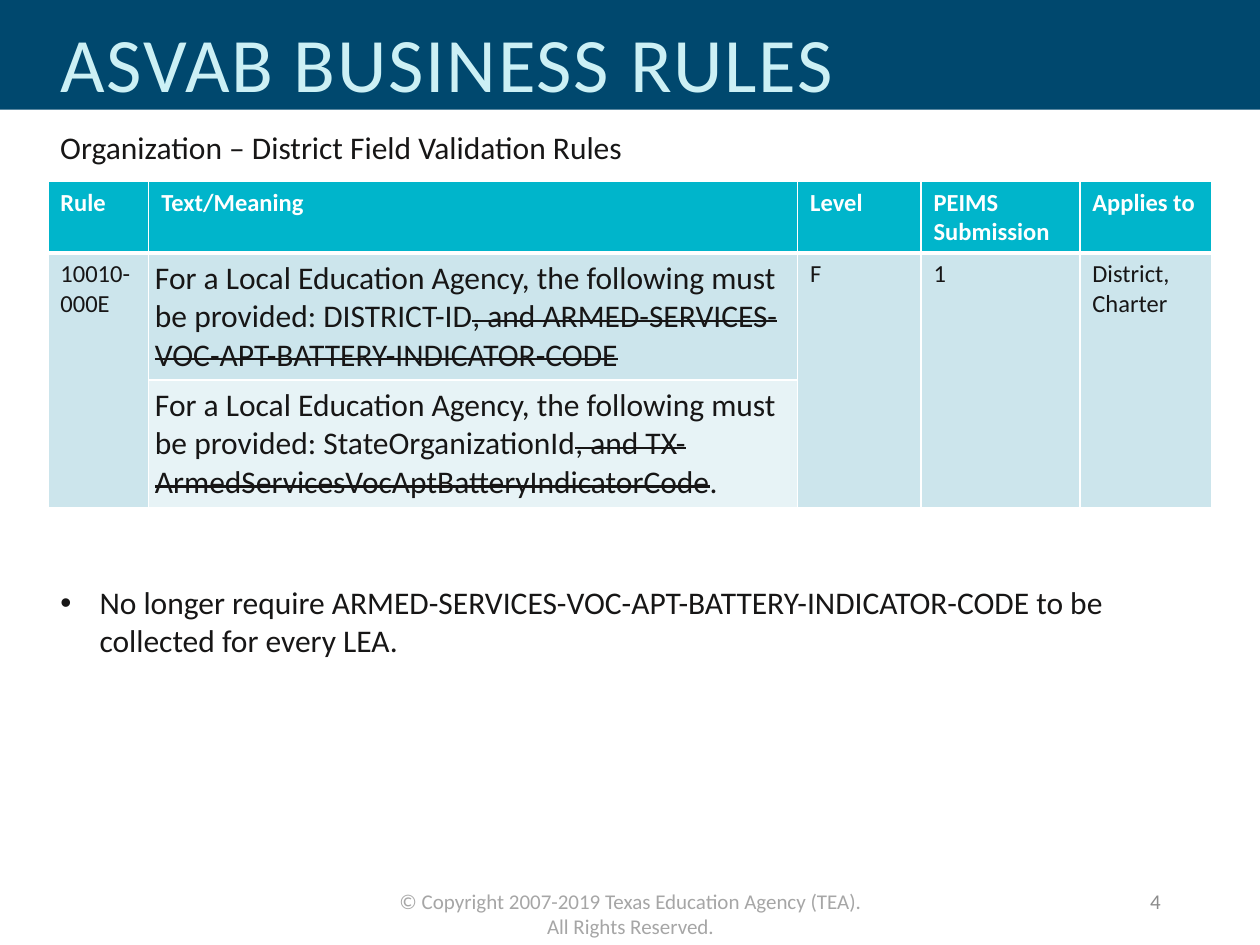
from lxml.etree import SubElement
from pptx import Presentation
from pptx.dml.color import RGBColor
from pptx.enum.shapes import MSO_SHAPE
from pptx.enum.text import MSO_ANCHOR, MSO_AUTO_SIZE, PP_ALIGN
from pptx.oxml.ns import qn
from pptx.util import Inches, Pt

FONT = "Calibri"
COLORS = {
    "band": "00486E", "title": "CCF0F5", "head": "00B5CB", "dark": "CCE5EC",
    "light": "E7F3F6", "text": "171616", "white": "FFFFFF",
    "foot": "A6A6A6", "page": "8C8C8C",
}
LEFT, WIDTH = 0.38, 9.23
LEAD = "For a Local Education Agency, the following must be provided: "


def color(name):
    return RGBColor.from_string(COLORS[name])


def style(run, size, tint, bold=False):
    font = run.font
    font.name, font.size, font.bold = FONT, Pt(size), bold
    font.color.rgb = color(tint)


def place(shape, box):
    shape.left, shape.top, shape.width, shape.height = map(Inches, box)


def add_text(slide, box, text, size, tint, align=PP_ALIGN.LEFT,
             anchor=MSO_ANCHOR.TOP):
    frame = slide.shapes.add_textbox(*map(Inches, box)).text_frame
    frame.word_wrap = True
    frame.vertical_anchor = anchor
    frame.text = text
    para = frame.paragraphs[0]
    para.alignment = align
    style(para.runs[0], size, tint)


def add_title(slide, box):
    """Draw the band across the top and set the title on it."""
    band = slide.shapes.add_shape(
        MSO_SHAPE.RECTANGLE, 0, 0, Inches(10), Inches(0.87))
    band.shadow.inherit = False
    band.fill.solid()
    band.fill.fore_color.rgb = color("band")
    band.line.fill.background()
    title = slide.shapes.title
    # The band goes behind the placeholders.
    title._element.addprevious(band._element)
    place(title, box)
    frame = title.text_frame
    frame.text = "ASVAB BUSINESS RULES"
    frame.auto_size = MSO_AUTO_SIZE.NONE
    frame.vertical_anchor = MSO_ANCHOR.MIDDLE
    para = frame.paragraphs[0]
    para.alignment = PP_ALIGN.LEFT
    para.line_spacing = 0.9
    style(para.runs[0], 44, "title")
    para.runs[0]._r.get_or_add_rPr().set("spc", "100")


def paint(cell, fill, top, base):
    """Give a cell white borders and a fill; top and base are in points."""
    props = cell._tc.get_or_add_tcPr()
    for side, width in (("L", 1), ("R", 1), ("T", top), ("B", base)):
        line = SubElement(props, qn(f"a:ln{side}"), w=str(Pt(width)))
        solid = SubElement(line, qn("a:solidFill"))
        SubElement(solid, qn("a:srgbClr"), val=COLORS["white"])
    cell.fill.solid()
    cell.fill.fore_color.rgb = color(fill)


def write(cell, text, tint, bold=False):
    cell.text_frame.text = text
    for para in cell.text_frame.paragraphs:
        style(para.runs[0], 14, tint, bold)


def write_rule(cell, parts):
    """Write (text, struck) parts into a cell with narrow margins."""
    cell.margin_left = cell.margin_right = Inches(0.05)
    para = cell.text_frame.paragraphs[0]
    for text, struck in parts:
        run = para.add_run()
        run.text = text
        style(run, 18, "text")
        if struck:
            run._r.get_or_add_rPr().set("strike", "sngStrike")


def add_rules(slide, box):
    heads = ["Rule", "Text/Meaning", "Level", "PEIMS\nSubmission", "Applies to"]
    values = {0: "10010-000E", 2: "F", 3: "1", 4: "District, Charter"}
    rules = [
        [(LEAD + "DISTRICT-ID", False),
         (", and ARMED-SERVICES-VOC-APT-BATTERY-INDICATOR-CODE", True)],
        [(LEAD + "StateOrganizationId", False),
         (", and TX-ArmedServicesVocAptBatteryIndicatorCode", True),
         (".", False)],
    ]
    table = slide.shapes.add_table(3, 5, *map(Inches, box)).table
    for col, width in zip(table.columns, (0.8, 5.15, 0.98, 1.26, 1.05)):
        col.width = Inches(width)
    for row, height in zip(table.rows, (0.56, 1.01, 1.01)):
        row.height = Inches(height)
    edges = [("head", 1, 3), ("dark", 3, 1), ("light", 1, 1)]
    for row, (fill, top, base) in zip(table.rows, edges):
        for cell in row.cells:
            paint(cell, fill, top, base)
    for col, head in enumerate(heads):
        write(table.cell(0, col), head, "white", True)
    for col, value in values.items():
        table.cell(1, col).merge(table.cell(2, col))
        write(table.cell(1, col), value, "text")
    for row, parts in enumerate(rules, 1):
        write_rule(table.cell(row, 1), parts)


def add_note(slide, box):
    body = slide.placeholders[1]
    place(body, box)
    frame = body.text_frame
    frame.text = ("No longer require ARMED-SERVICES-VOC-APT-BATTERY-"
                  "INDICATOR-CODE to be collected for every LEA.")
    frame.auto_size = MSO_AUTO_SIZE.NONE
    para = frame.paragraphs[0]
    para.space_before = Pt(0)
    props = para._p.get_or_add_pPr()
    props.set("marL", str(Inches(0.31)))
    props.set("indent", str(-Inches(0.31)))
    SubElement(props, qn("a:buFont"), typeface="Arial")
    SubElement(props, qn("a:buChar"), char="•")
    style(para.runs[0], 18, "text")


def add_footer(slide, box):
    left, top, width, height = box
    add_text(slide, (left, top, 3.93, height),
             "© Copyright 2007-2019 Texas Education Agency (TEA). "
             "All Rights Reserved.", 12, "foot", PP_ALIGN.CENTER)
    add_text(slide, (left + width - 2.25, top - 0.05, 2.25, 0.4), "4", 12,
             "page", PP_ALIGN.RIGHT, MSO_ANCHOR.MIDDLE)


def main():
    deck = Presentation()
    deck.slide_width, deck.slide_height = Inches(10), Inches(7.5)
    slide = deck.slides.add_slide(deck.slide_layouts[1])
    add_title(slide, (LEFT, 0.1, 8.28, 0.87))
    add_text(slide, (LEFT, 0.97, 8.2, 0.4),
             "Organization – District Field Validation Rules", 18, "text")
    add_rules(slide, (LEFT, 1.44, WIDTH, 2.57))
    add_note(slide, (LEFT, 4.58, WIDTH, 0.71))
    add_footer(slide, (3.04, 7, 6.27, 0.3))
    deck.save("out.pptx")


if __name__ == "__main__":
    main()
